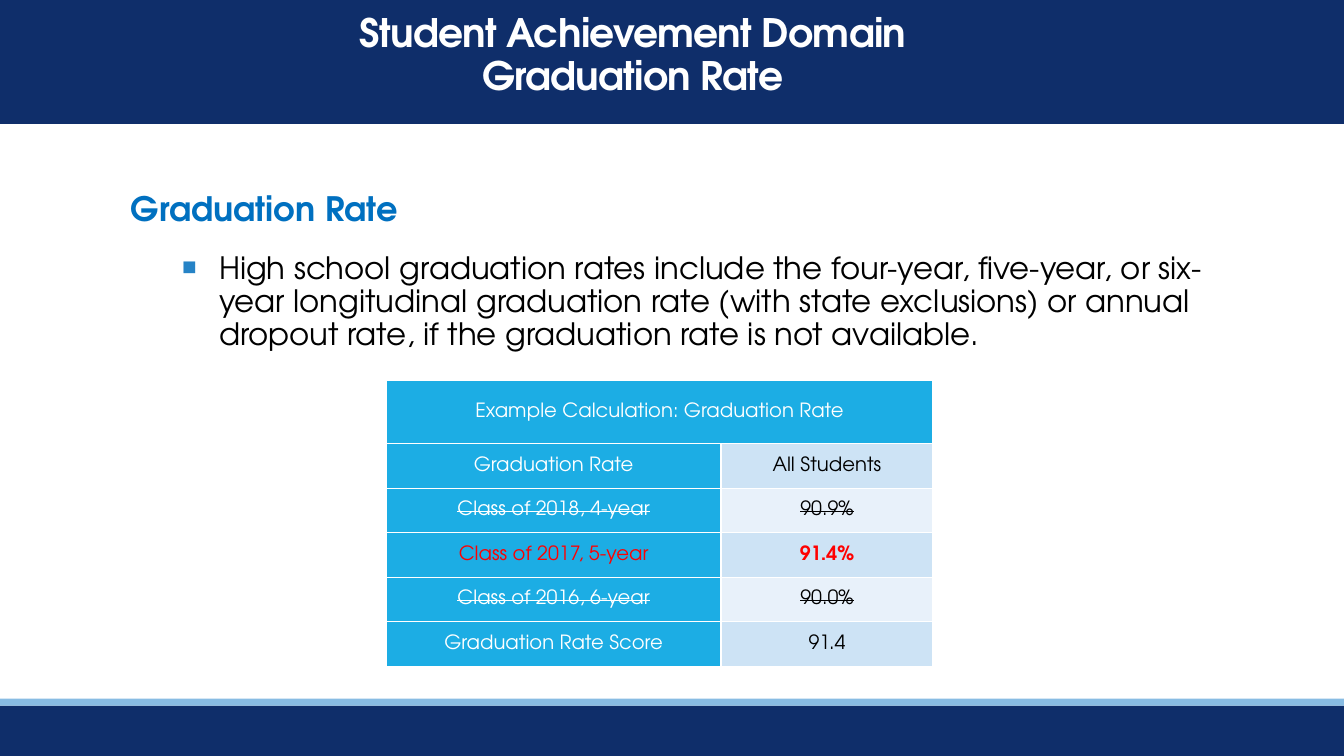
from lxml import etree
from pptx import Presentation
from pptx.dml.color import RGBColor
from pptx.enum.shapes import MSO_SHAPE
from pptx.enum.text import MSO_ANCHOR, PP_ALIGN
from pptx.oxml.ns import qn
from pptx.util import Pt

RECTANGLE = MSO_SHAPE.RECTANGLE
MIDDLE = MSO_ANCHOR.MIDDLE
LEFT, CENTER = PP_ALIGN.LEFT, PP_ALIGN.CENTER

NAVY = RGBColor(0x0F, 0x2E, 0x6A)
PALE_BLUE = RGBColor(0x88, 0xBC, 0xE3)
HEADING_BLUE = RGBColor(0x00, 0x70, 0xC0)
BULLET_BLUE = RGBColor(0x26, 0x83, 0xC6)
CYAN = RGBColor(0x1C, 0xAD, 0xE4)
BAND_DARK = RGBColor(0xCD, 0xE3, 0xF5)
BAND_LIGHT = RGBColor(0xE8, 0xF1, 0xFA)
WHITE = RGBColor(0xFF, 0xFF, 0xFF)
BLACK = RGBColor(0x00, 0x00, 0x00)
RED = RGBColor(0xFF, 0x00, 0x00)

WIDTH, HEIGHT = 960, 540
RATES = [
    ("Graduation Rate", "All Students"),
    ("Class of 2018, 4-year", "90.9%"),
    ("Class of 2017, 5-year", "91.4%"),
    ("Class of 2016, 6-year", "90.0%"),
    ("Graduation Rate Score", "91.4"),
]
STRUCK_ROWS = (2, 4)
CHOSEN_ROW = 3


class SlideBuilder:
    font = "TeX Gyre Adventor"

    def __init__(self, slide):
        self.slide = slide

    def band(self, top, height, color):
        band = self.slide.shapes.add_shape(RECTANGLE, 0, Pt(top), Pt(WIDTH), Pt(height))
        band.shadow.inherit = False
        band.fill.solid()
        band.fill.fore_color.rgb = color
        band.line.fill.background()

    def text_frame(self, left, top, width, height):
        box = self.slide.shapes.add_textbox(Pt(left), Pt(top), Pt(width), Pt(height))
        box.text_frame.word_wrap = True
        return box.text_frame

    def set_text(self, paragraph, text, size, color, bold=False, align=LEFT,
                 before=0, after=0, line=1.0, tracking=0, struck=False):
        paragraph.text = text
        paragraph.alignment = align
        paragraph.space_before = Pt(before)
        paragraph.space_after = Pt(after)
        paragraph.line_spacing = line
        for run in paragraph.runs:
            run.font.name = self.font
            run.font.size = Pt(size)
            run.font.bold = bold
            run.font.color.rgb = color
            properties = run._r.get_or_add_rPr()
            if tracking:
                properties.set("spc", str(int(tracking * 100)))
            if struck:
                properties.set("strike", "sngStrike")

    def bullet(self, paragraph, symbol, color, margin, hanging):
        properties = paragraph._p.get_or_add_pPr()
        properties.set("marL", str(Pt(margin)))
        properties.set("indent", str(-Pt(hanging)))
        tint = etree.SubElement(properties, qn("a:buClr"))
        etree.SubElement(tint, qn("a:srgbClr"), val=str(color))
        etree.SubElement(properties, qn("a:buFont"), typeface=self.font)
        etree.SubElement(properties, qn("a:buChar"), char=symbol)

    def table(self, left, top, columns, rows):
        frame = self.slide.shapes.add_table(
            len(rows), len(columns), Pt(left), Pt(top), Pt(sum(columns)), Pt(sum(rows)))
        table = frame.table
        table.first_row = table.horz_banding = False
        for column, width in zip(table.columns, columns):
            column.width = Pt(width)
        for row, height in zip(table.rows, rows):
            row.height = Pt(height)
        return table

    def cell(self, cell, text, fill, color, bold=False, struck=False):
        cell.margin_left = cell.margin_right = Pt(5)
        cell.margin_top = cell.margin_bottom = 0
        cell.vertical_anchor = MIDDLE
        properties = cell._tc.get_or_add_tcPr()
        for side in ("lnL", "lnR", "lnT", "lnB"):
            border = etree.SubElement(properties, qn(f"a:{side}"), w=str(Pt(1)))
            paint = etree.SubElement(border, qn("a:solidFill"))
            etree.SubElement(paint, qn("a:srgbClr"), val=str(WHITE))
        cell.fill.solid()
        cell.fill.fore_color.rgb = fill
        self.set_text(cell.text_frame.paragraphs[0], text, 14, color, bold, CENTER,
                      before=3, after=3, struck=struck)


def main():
    presentation = Presentation()
    presentation.slide_width, presentation.slide_height = Pt(WIDTH), Pt(HEIGHT)
    builder = SlideBuilder(presentation.slides.add_slide(presentation.slide_layouts[6]))

    builder.band(504, 36, NAVY)
    builder.band(499, 5, PALE_BLUE)

    body = builder.text_frame(86.4, 134, 792, 328)
    builder.set_text(body.paragraphs[0], "Graduation Rate", 24, HEADING_BLUE, bold=True,
                     before=5, after=12, line=0.9)
    explanation = body.add_paragraph()
    builder.set_text(explanation,
                     "High school graduation rates include the four-year, five-year, or "
                     "six-year longitudinal graduation rate (with state exclusions) or "
                     "annual dropout rate, if the graduation rate is not available.",
                     22, BLACK, before=5, after=12, line=0.9)
    builder.bullet(explanation, "▪", BULLET_BLUE, margin=63, hanging=27)

    builder.band(0, 88.5, NAVY)
    title = builder.text_frame(63, 6.5, 778, 66)
    title.text = "Student Achievement Domain\nGraduation Rate"
    for paragraph in title.paragraphs:
        builder.set_text(paragraph, paragraph.text, 28, WHITE, bold=True, align=CENTER,
                         line=0.9, tracking=-0.5)

    table = builder.table(276, 271.5, [239, 151.5], [45.5] + [31.8] * len(RATES))
    table.cell(0, 0).merge(table.cell(0, 1))
    builder.cell(table.cell(0, 0), "Example Calculation: Graduation Rate", CYAN, WHITE)
    for row, (label, value) in enumerate(RATES, start=1):
        struck, chosen = row in STRUCK_ROWS, row == CHOSEN_ROW
        builder.cell(table.cell(row, 0), label, CYAN, RED if chosen else WHITE,
                     struck=struck)
        builder.cell(table.cell(row, 1), value, BAND_DARK if row % 2 else BAND_LIGHT,
                     RED if chosen else BLACK, bold=chosen, struck=struck)

    presentation.save("out.pptx")


if __name__ == "__main__":
    main()
